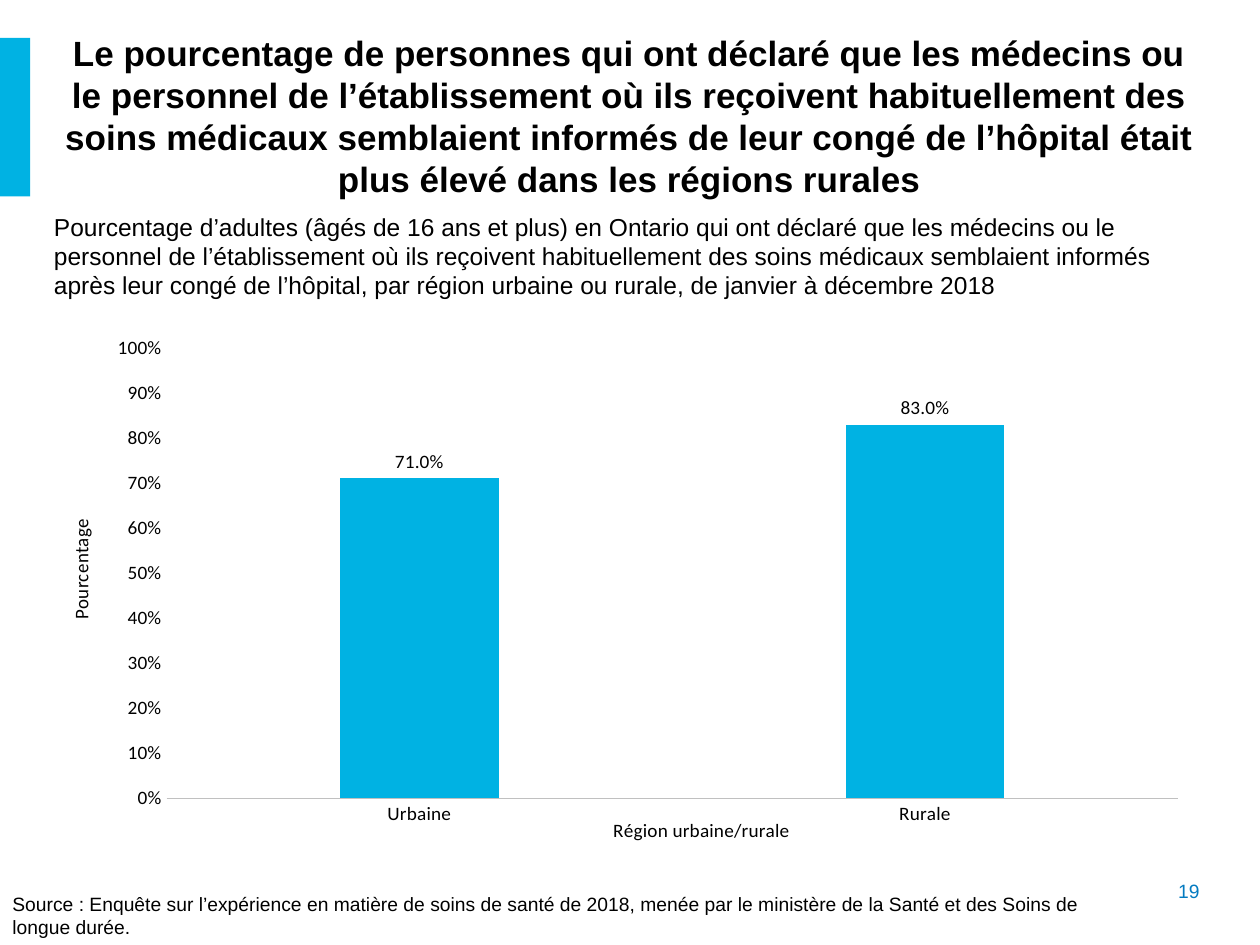
"""Build the slide on hospital discharge follow-up in urban and rural regions."""
import pptx
import pptx.chart.data
import pptx.dml.color
import pptx.enum.chart
import pptx.enum.dml
import pptx.enum.shapes
import pptx.enum.text
import pptx.oxml
import pptx.util
from pptx.util import Inches

ALIGN = pptx.enum.text.PP_ALIGN
ANCHOR = pptx.enum.text.MSO_ANCHOR
CHART_NS = "http://schemas.openxmlformats.org/drawingml/2006/chart"


def color(hex_string):
    return pptx.dml.color.RGBColor.from_string(hex_string)


def layout_xml(x, y, width=None, height=None):
    target = '<c:layoutTarget val="inner"/>' if width else ""
    size = f'<c:w val="{width}"/><c:h val="{height}"/>' if width else ""
    return pptx.oxml.parse_xml(
        f'<c:layout xmlns:c="{CHART_NS}"><c:manualLayout>{target}'
        '<c:xMode val="edge"/><c:yMode val="edge"/>'
        f'<c:x val="{x}"/><c:y val="{y}"/>{size}</c:manualLayout></c:layout>'
    )


deck = pptx.Presentation()
deck.slide_width = Inches(10)
deck.slide_height = Inches(7.5)
page = deck.slides.add_slide(deck.slide_layouts[5])

accent = page.shapes.add_shape(
    pptx.enum.shapes.MSO_SHAPE.RECTANGLE, 0, Inches(0.3), Inches(0.24), Inches(1.26)
)
accent.shadow.inherit = False
accent.fill.solid()
accent.fill.fore_color.rgb = color("00B2E3")
accent.line.fill.background()

title = page.shapes.title
title.line.color.rgb = color("FFFFFF")
title.line.width = pptx.util.Pt(2.5)
title.line.dash_style = pptx.enum.dml.MSO_LINE.ROUND_DOT
subtitle, source, number = [page.shapes.add_textbox(0, 0, 0, 0) for _ in range(3)]

texts = [
    (title, (0.33, 0.19, 9.33, 1.45), 20, "000000", ALIGN.CENTER, ANCHOR.MIDDLE,
     "Le pourcentage de personnes qui ont déclaré que les médecins ou le personnel de "
     "l’établissement où ils reçoivent habituellement des soins médicaux semblaient "
     "informés de leur congé de l’hôpital était plus élevé dans les régions rurales"),
    (subtitle, (0.33, 1.63, 9.19, 0.81), 14, "000000", ALIGN.LEFT, ANCHOR.TOP,
     "Pourcentage d’adultes (âgés de 16 ans et plus) en Ontario qui ont déclaré que les "
     "médecins ou le personnel de l’établissement où ils reçoivent habituellement des "
     "soins médicaux semblaient informés après leur congé de l’hôpital, par région "
     "urbaine ou rurale, de janvier à décembre 2018"),
    (source, (0, 7.03, 8.9, 0.29), 11, "000000", ALIGN.LEFT, ANCHOR.TOP,
     "Source : Enquête sur l’expérience en matière de soins de santé de 2018, menée par "
     "le ministère de la Santé et des Soins de longue durée."),
    (number, (8.45, 6.93, 1.17, 0.29), 11, "047BC1", ALIGN.RIGHT, ANCHOR.TOP, "19"),
]
for box, place, size, ink, alignment, anchor, words in texts:
    box.left, box.top, box.width, box.height = [Inches(length) for length in place]
    frame = box.text_frame
    frame.word_wrap = True
    frame.auto_size = pptx.enum.text.MSO_AUTO_SIZE.NONE
    frame.vertical_anchor = anchor
    para = frame.paragraphs[0]
    para.text = words
    para.alignment = alignment
    para.font.name = "Arial"
    para.font.size = pptx.util.Pt(size)
    para.font.bold = box is title
    para.font.color.rgb = color(ink)

data = pptx.chart.data.CategoryChartData(number_format="0.0%")
data.categories = ["Urbaine", "Rurale"]
data.add_series("Pourcentage", [0.71, 0.83])
chart = page.shapes.add_chart(
    pptx.enum.chart.XL_CHART_TYPE.COLUMN_CLUSTERED,
    Inches(0.33), Inches(2.6), Inches(9.02), Inches(4.13), data,
).chart
chart.has_title = False
chart.has_legend = False
chart.font.name = "Calibri"
chart.font.size = pptx.util.Pt(11)
chart.font.color.rgb = color("000000")

plot = chart.plots[0]
plot.gap_width = 219
plot.overlap = -27
plot.vary_by_categories = False
columns = plot.series[0]
columns.format.fill.solid()
columns.format.fill.fore_color.rgb = color("00B2E3")
labels = columns.data_labels
labels.show_value = True
labels.number_format = "0.0%"
labels.number_format_is_linked = False
labels.position = pptx.enum.chart.XL_LABEL_POSITION.OUTSIDE_END

axis_titles = [
    (chart.category_axis, "Région urbaine/rurale", 0.5, 0.95),
    (chart.value_axis, "Pourcentage", 0.02, 0.37),
]
for axis, words, x, y in axis_titles:
    axis.has_major_gridlines = False
    axis.major_tick_mark = pptx.enum.chart.XL_TICK_MARK.NONE
    axis.minor_tick_mark = pptx.enum.chart.XL_TICK_MARK.NONE
    para = axis.axis_title.text_frame.paragraphs[0]
    para.text = words
    para.font.name = "Calibri"
    para.font.size = pptx.util.Pt(11)
    para.font.bold = False
    para.font.color.rgb = color("000000")
    heading = axis.axis_title._element
    for old in heading.findall(f"{{{CHART_NS}}}layout"):
        heading.remove(old)
    heading.find(f"{{{CHART_NS}}}tx").addnext(layout_xml(x, y))

chart.category_axis.format.line.color.rgb = color("C0C0C0")
chart.category_axis.format.line.width = pptx.util.Pt(0.25)
values = chart.value_axis
values.minimum_scale = 0
values.maximum_scale = 1
values.major_unit = 0.1
values.format.line.fill.background()
values.tick_labels.number_format = "0%"
values.tick_labels.number_format_is_linked = False

plot_area = chart._chartSpace.chart.plotArea
for old in plot_area.findall(f"{{{CHART_NS}}}layout"):
    plot_area.remove(old)
plot_area.insert(0, layout_xml(0.11, 0.04, 0.89, 0.88))

deck.save("out.pptx")
